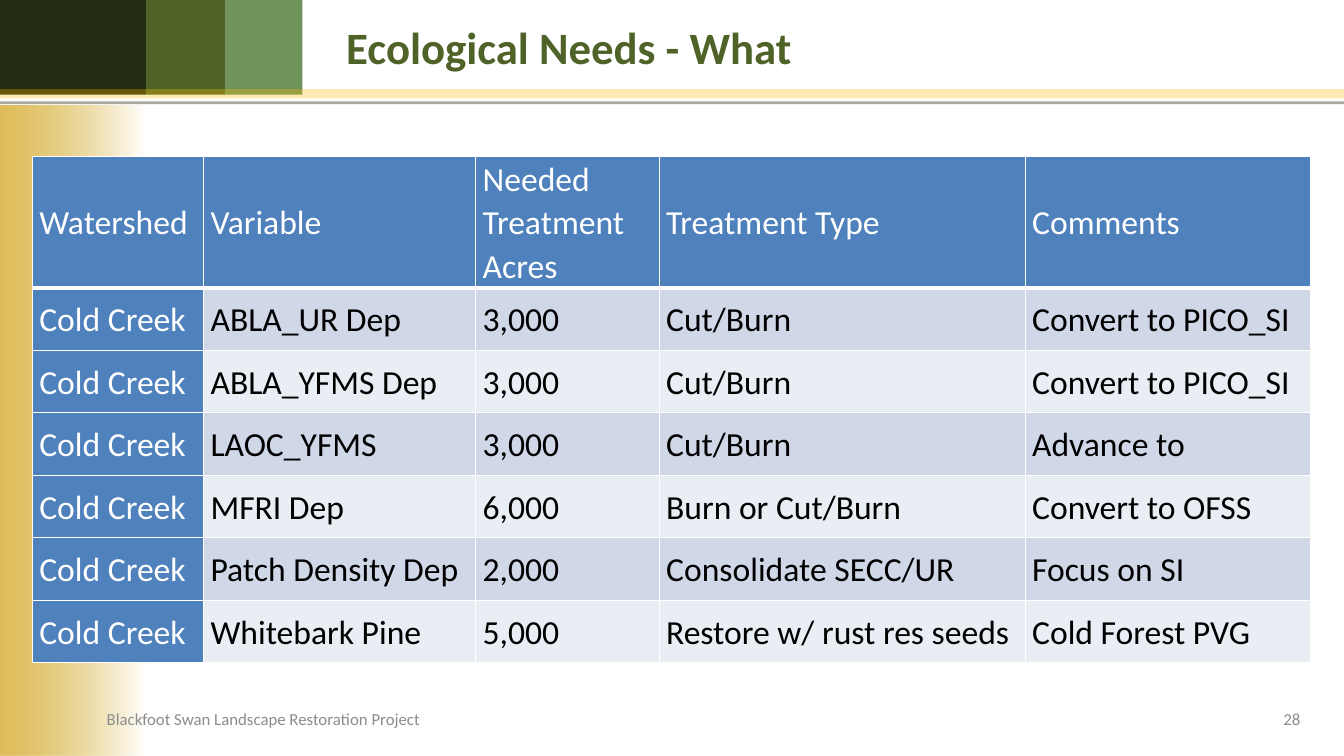
from itertools import pairwise

from lxml import etree
from pptx import Presentation
from pptx.dml.color import RGBColor
from pptx.enum.shapes import MSO_CONNECTOR, MSO_SHAPE
from pptx.enum.text import MSO_ANCHOR, PP_ALIGN
from pptx.oxml.ns import qn
from pptx.util import Inches, Pt

RECTANGLE = MSO_SHAPE.RECTANGLE
STRAIGHT = MSO_CONNECTOR.STRAIGHT
MIDDLE = MSO_ANCHOR.MIDDLE
LEFT, CENTER, RIGHT = PP_ALIGN.LEFT, PP_ALIGN.CENTER, PP_ALIGN.RIGHT

COLORS = {
    "gold": "CC9900",
    "amber": "FFC000",
    "forest": "232C12",
    "olive": "4F6228",
    "sage": "6F935B",
    "blue": "4F81BD",
    "band_dark": "D0D8E8",
    "band_light": "E9EDF4",
    "grey": "8C8C8C",
    "white": "FFFFFF",
    "black": "000000",
}

HEADINGS = ("Watershed", "Variable", "Needed Treatment Acres", "Treatment Type", "Comments")
NEEDS = [
    ("ABLA_UR Dep", "3,000", "Cut/Burn", "Convert to PICO_SI"),
    ("ABLA_YFMS Dep", "3,000", "Cut/Burn", "Convert to PICO_SI"),
    ("LAOC_YFMS", "3,000", "Cut/Burn", "Advance to"),
    ("MFRI Dep", "6,000", "Burn or Cut/Burn", "Convert to OFSS"),
    ("Patch Density Dep", "2,000", "Consolidate SECC/UR", "Focus on SI"),
    ("Whitebark Pine", "5,000", "Restore w/ rust res seeds", "Cold Forest PVG"),
]


def rgb(name):
    return RGBColor.from_string(COLORS[name])


def set_alpha(element, percent):
    color = next(element.iter(qn("a:srgbClr")))
    etree.SubElement(color, qn("a:alpha"), val=str(percent * 1000))


class SlideBuilder:
    font = "Calibri"

    def __init__(self, deck):
        self.deck = deck
        self.slide = deck.slides.add_slide(deck.slide_layouts[5])

    def x(self, percent):
        return round(self.deck.slide_width * percent / 100)

    def y(self, percent):
        return round(self.deck.slide_height * percent / 100)

    def box(self, left, top, width, height):
        return self.x(left), self.y(top), self.x(width), self.y(height)

    def style(self, paragraph, size, color, bold=False):
        paragraph.font.name = self.font
        paragraph.font.size = Pt(size)
        paragraph.font.bold = bold
        paragraph.font.color.rgb = rgb(color)

    def set_text(self, shape, text, size, color, align, bold=False):
        frame = shape.text_frame
        frame.word_wrap = True
        frame.vertical_anchor = MIDDLE
        frame.text = text
        frame.paragraphs[0].alignment = align
        self.style(frame.paragraphs[0], size, color, bold)

    def title(self, text, *place):
        heading = self.slide.shapes.title
        heading.left, heading.top, heading.width, heading.height = self.box(*place)
        self.set_text(heading, text, 32, "olive", LEFT, bold=True)

    def caption(self, text, align, *place):
        note = self.slide.shapes.add_textbox(*self.box(*place))
        self.set_text(note, text, 12, "grey", align)

    def block(self, color, *place):
        panel = self.slide.shapes.add_shape(RECTANGLE, *self.box(*place))
        panel.shadow.inherit = False
        panel.line.fill.background()
        panel.fill.solid()
        panel.fill.fore_color.rgb = rgb(color)
        return panel

    def fade(self, start, end, alpha, *place):
        panel = self.block(start, *place)
        panel.fill.gradient()
        panel.fill.gradient_angle = 0
        for stop, color, position in zip(panel.fill.gradient_stops, (start, end), (0, 0.5)):
            stop.color.rgb = rgb(color)
            stop.position = position
        set_alpha(panel.element.spPr, alpha)

    def rule(self, color, weight, alpha, top):
        stripe = self.slide.shapes.add_connector(
            STRAIGHT, 0, self.y(top), self.x(100), self.y(top))
        stripe.line.width = Pt(weight)
        stripe.line.color.rgb = rgb(color)
        properties = stripe.element.spPr
        set_alpha(properties, alpha)
        etree.SubElement(properties, qn("a:effectLst"))

    def cell(self, cell, text, fill, color, bottom):
        cell.text = text
        cell.vertical_anchor = MIDDLE
        cell.margin_left = cell.margin_right = Pt(5)
        cell.margin_top = cell.margin_bottom = 0
        paragraph = cell.text_frame.paragraphs[0]
        paragraph.line_spacing = 1.07
        self.style(paragraph, 24, color)
        cell.fill.solid()
        cell.fill.fore_color.rgb = rgb(fill)
        properties = cell._tc.get_or_add_tcPr()
        for index, (side, weight) in enumerate(zip("LRTB", (1, 1, 1, bottom))):
            border = etree.Element(qn(f"a:ln{side}"), w=str(Pt(weight)))
            paint = etree.SubElement(border, qn("a:solidFill"))
            etree.SubElement(paint, qn("a:srgbClr"), val=COLORS["white"])
            properties.insert(index, border)

    def table(self, records, left, top, widths, heights):
        place = self.box(left, top, sum(widths), sum(heights))
        grid = self.slide.shapes.add_table(len(records), len(widths), *place).table
        for column, width in zip(grid.columns, widths):
            column.width = self.x(width)
        for r, (record, height) in enumerate(zip(records, heights)):
            grid.rows[r].height = self.y(height)
            band = "band_dark" if r % 2 else "band_light"
            for c, text in enumerate(record):
                heading = r == 0 or c == 0
                fill, color = ("blue", "white") if heading else (band, "black")
                self.cell(grid.cell(r, c), text, fill, color, 1 if r else 3)


def main():
    deck = Presentation()
    deck.slide_width, deck.slide_height = Inches(13.33), Inches(7.5)
    page = SlideBuilder(deck)

    page.fade("gold", "white", 65, 0, 14, 21.7, 86)
    block_edges = pairwise((0, 10.88, 16.73, 22.5))
    for color, (start, end) in zip(("forest", "olive", "sage"), block_edges):
        page.block(color, start, 0, end - start, 12.53)
    page.rule("amber", 6.5, 30, 12.4)
    page.rule("forest", 2, 40, 13.6)

    page.title("Ecological Needs - What", 25, 0, 75, 12.27)
    records = [HEADINGS] + [("Cold Creek", *need) for need in NEEDS]
    page.table(records, 2.4, 20.67, (12.75, 20.25, 13.65, 27.23, 21.22),
               [17.4] + [8.27] * len(NEEDS))
    page.caption("Blackfoot Swan Landscape Restoration Project", CENTER, 1.6, 92.4, 36, 5.33)
    page.caption("28", RIGHT, 65, 92.4, 32.5, 5.33)

    deck.save("out.pptx")


if __name__ == "__main__":
    main()
